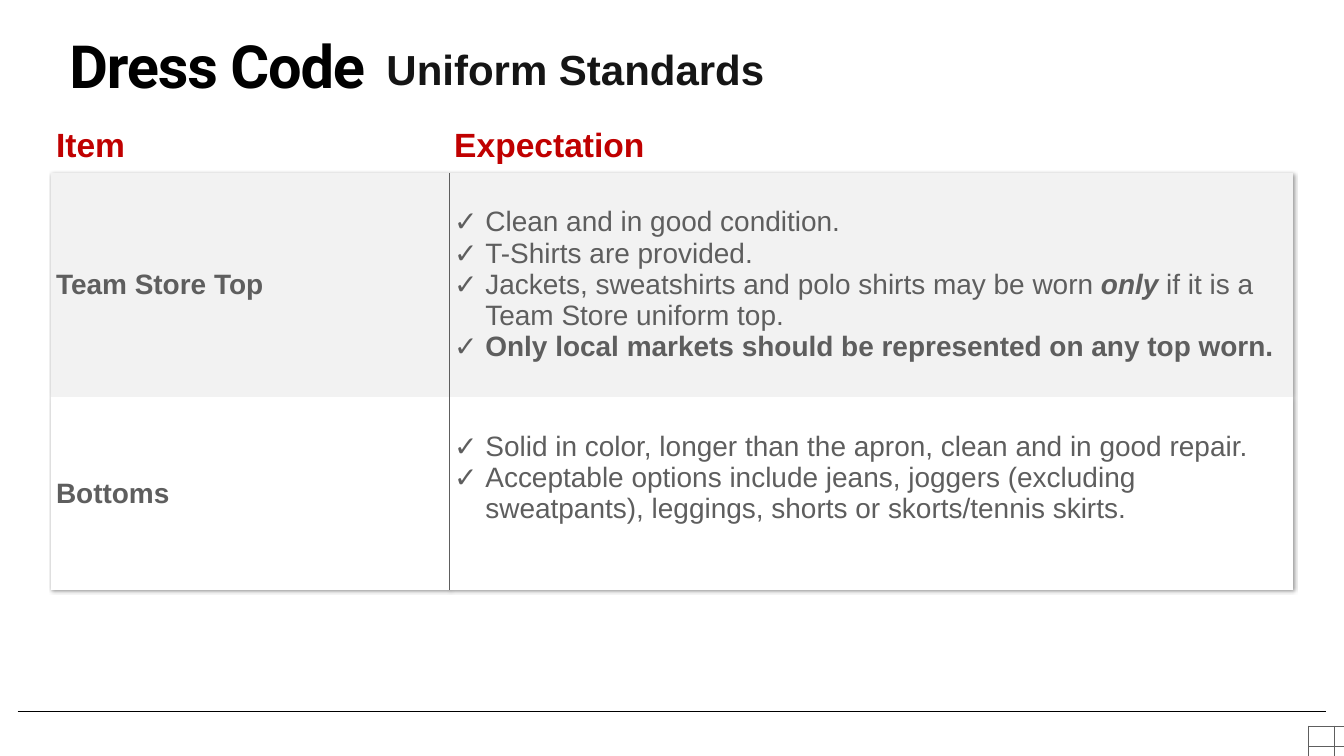
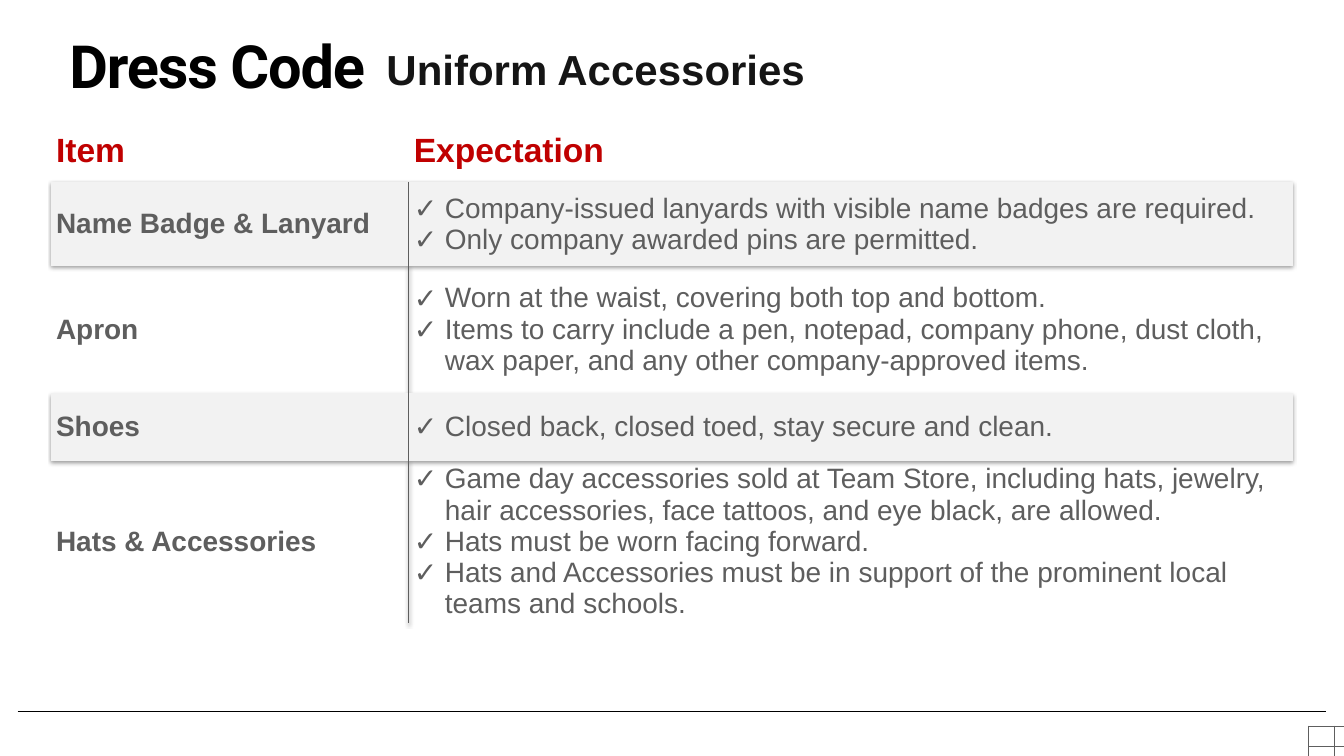
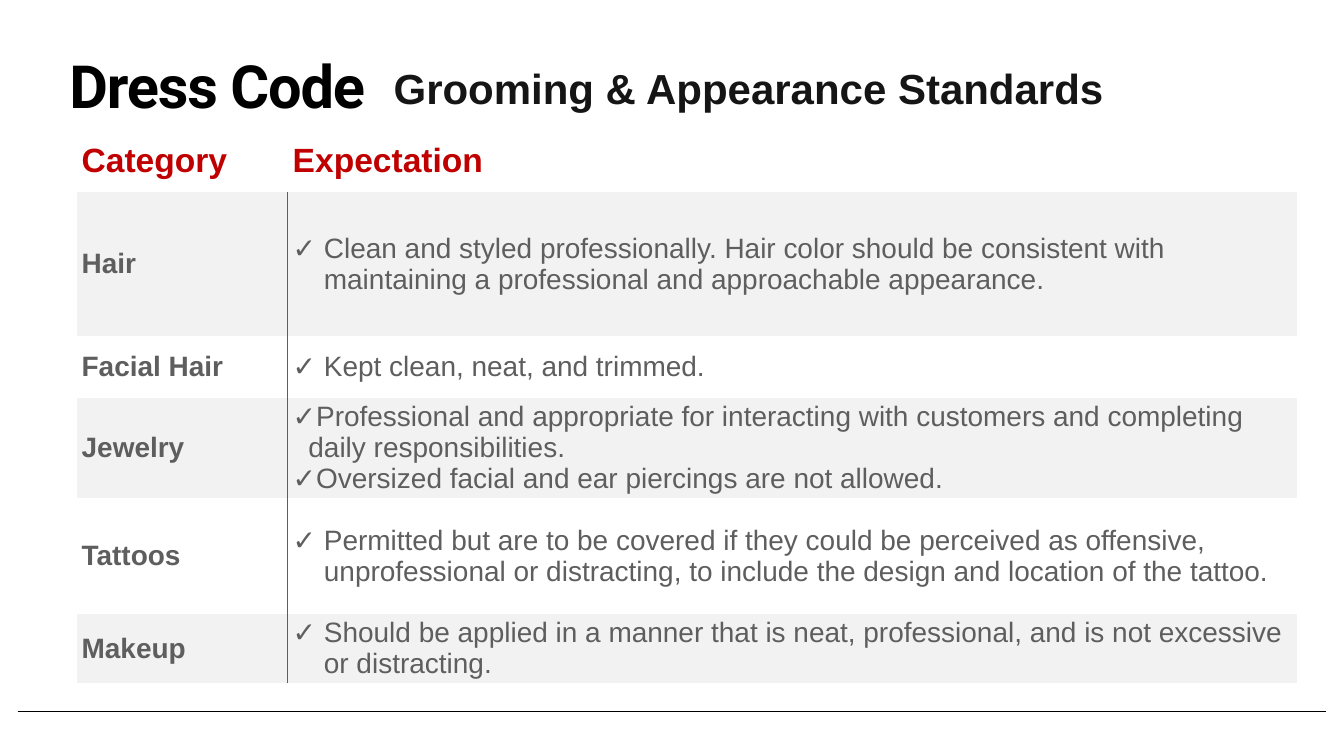
"""Build three dress code slides: uniform, accessories and grooming."""
import pptx
import pptx.dml.color
import pptx.enum.shapes
import pptx.enum.text
import pptx.oxml
import pptx.oxml.ns
import pptx.util
from lxml import etree
from pptx.util import Cm, Pt

COLORS = {
    "black": "000000",
    "subtitle": "151515",
    "heading": "C00000",
    "text": "5E5E5E",
    "band": "F2F2F2",
    "white": "FFFFFF",
}
FONT = "Arial"
TITLE_FONT = "Roboto"
NO_STYLE = "{2D5ABB26-0587-4C30-8999-92F81FD0307C}"
INDENT = 1.57
TIGHT_INDENT = 0.79
SIDES = ("L", "R", "T", "B")


def color(name):
    return pptx.dml.color.RGBColor.from_string(COLORS[name])


def add_child(parent, tag, **attributes):
    return etree.SubElement(parent, pptx.oxml.ns.qn(tag), **attributes)


class Deck:
    """Holds the shared style and the current slide."""

    def __init__(self):
        self.presentation = pptx.Presentation()
        self.presentation.slide_width = Cm(67.74)
        self.presentation.slide_height = Cm(38.1)
        self.slide = None

    def format_run(self, run, size, color_name, bold=True, italic=False, font=FONT):
        run.font.name = font
        run.font.size = Pt(size)
        run.font.bold = bold
        run.font.italic = italic
        run.font.color.rgb = color(color_name)

    def set_frame(self, text_frame, text, inset, spacing, anchor):
        text_frame.text = text
        text_frame.word_wrap = True
        text_frame.auto_size = pptx.enum.text.MSO_AUTO_SIZE.NONE
        text_frame.vertical_anchor = anchor
        for side in ("left", "right", "top", "bottom"):
            setattr(text_frame, f"margin_{side}", Cm(inset))
        paragraph = text_frame.paragraphs[0]
        paragraph.alignment = pptx.enum.text.PP_ALIGN.LEFT
        paragraph.line_spacing = spacing
        return paragraph.runs[0]

    def add_slide(self, title_top=2.03):
        layout = self.presentation.slide_layouts.get_by_name("Title Only")
        self.slide = self.presentation.slides.add_slide(layout)
        self.add_footer_line()
        self.add_title(title_top)

    def add_footer_line(self):
        line = self.slide.shapes.add_connector(
            pptx.enum.shapes.MSO_CONNECTOR.STRAIGHT,
            Cm(0.89), Cm(35.86), Cm(66.83), Cm(35.86))
        line.line.color.rgb = color("black")
        line.line.width = Pt(1)
        add_child(line.element.spPr, "a:effectLst")

    def add_title(self, top):
        title = self.slide.shapes.title
        title.left, title.top, title.width, title.height = (
            Cm(3.35), Cm(top), Cm(27.15), Cm(3.99))
        run = self.set_frame(title.text_frame, "Dress Code", 0.15, 0.8,
                             pptx.enum.text.MSO_ANCHOR.TOP)
        self.format_run(run, 85, "black", font=TITLE_FONT)
        run.font._element.set("spc", "-170")

    def add_subtitle(self, text, left=19.35, top=2.29, width=27.15):
        box = self.slide.shapes.add_textbox(Cm(left), Cm(top), Cm(width), Cm(2.59))
        run = self.set_frame(box.text_frame, text, 0.13, 0.9,
                             pptx.enum.text.MSO_ANCHOR.BOTTOM)
        self.format_run(run, 60, "subtitle")

    def add_table(self, left, top, widths, heights, shadow_direction=None):
        table = self.slide.shapes.add_table(
            len(heights), len(widths), Cm(left), Cm(top),
            Cm(sum(widths)), Cm(sum(heights))).table
        table.first_row = table.horz_banding = False
        for column, width in zip(table.columns, widths):
            column.width = Cm(width)
        for row, height in zip(table.rows, heights):
            row.height = Cm(height)
        properties = table._tbl.tblPr
        properties.find(pptx.oxml.ns.qn("a:tableStyleId")).text = NO_STYLE
        if shadow_direction:
            effects = add_child(properties, "a:effectLst")
            properties.insert(0, effects)
            shadow = add_child(effects, "a:outerShdw", blurRad="50800", dist="38100",
                               dir=str(shadow_direction * 60000), algn="tl", rotWithShape="0")
            shade = add_child(shadow, "a:srgbClr", val=COLORS["black"])
            add_child(shade, "a:alpha", val="40000")
        return table

    def set_fill(self, cell, color_name):
        if color_name:
            cell.fill.solid()
            cell.fill.fore_color.rgb = color(color_name)
        else:
            cell.fill.background()

    def set_borders(self, cell, sides):
        properties = cell._tc.get_or_add_tcPr()
        for position, side in enumerate(sides):
            border = add_child(properties, f"a:ln{side}", w=str(Pt(1)))
            fill = add_child(border, "a:solidFill")
            add_child(fill, "a:srgbClr", val=COLORS["text"])
            properties.insert(position, border)

    def set_label(self, cell, text, size, color_name):
        cell.text = text
        cell.vertical_anchor = pptx.enum.text.MSO_ANCHOR.MIDDLE
        self.format_run(cell.text_frame.paragraphs[0].runs[0], size, color_name)

    def set_checks(self, cell, items, indent):
        cell.vertical_anchor = pptx.enum.text.MSO_ANCHOR.MIDDLE
        text_frame = cell.text_frame
        for number, item in enumerate(items):
            paragraph = text_frame.add_paragraph() if number else text_frame.paragraphs[0]
            properties = paragraph._p.get_or_add_pPr()
            properties.set("marL", str(Cm(indent)))
            properties.set("indent", str(-Cm(indent)))
            add_child(properties, "a:buFont", typeface=FONT)
            add_child(properties, "a:buChar", char="✓")
            parts = [(item, False, False)] if isinstance(item, str) else item
            for text, bold, italic in parts:
                run = paragraph.add_run()
                run.text = text
                self.format_run(run, 40, "text", bold, italic)

    def add_expectations(self, table, heading, rows, plain_fill=None, tight_rows=()):
        for cell, text in zip(table.rows[0].cells, (heading, "Expectation")):
            self.set_fill(cell, None)
            self.set_label(cell, text, 48, "heading")
        for number, (label, items) in enumerate(rows, 1):
            label_cell, items_cell = table.rows[number].cells
            self.set_label(label_cell, label, 40, "text")
            self.set_checks(items_cell, items,
                            TIGHT_INDENT if label in tight_rows else INDENT)
            for cell, side in ((label_cell, "R"), (items_cell, "L")):
                self.set_fill(cell, "band" if number % 2 else plain_fill)
                self.set_borders(cell, side)

    def add_corner_grid(self):
        grid = self.add_table(65.96, 36.58, [1.27] * 2, [1.04] * 6)
        for cell in grid.iter_cells():
            self.set_fill(cell, None)
            self.set_borders(cell, SIDES)


UNIFORM = [
    ("Team Store Top", [
        "Clean and in good condition.",
        "T-Shirts are provided.",
        [("Jackets, sweatshirts and polo shirts may be worn ", False, False),
         ("only", True, True),
         (" if it is a Team Store uniform top.", False, False)],
        [("Only local markets should be represented on any top worn.", True, False)],
    ]),
    ("Bottoms", [
        "Solid in color, longer than the apron, clean and in good repair.",
        "Acceptable options include jeans, joggers (excluding sweatpants), "
        "leggings, shorts or skorts/tennis skirts.",
    ]),
]
ACCESSORIES = [
    ("Name Badge & Lanyard", [
        "Company-issued lanyards with visible name badges are required.",
        "Only company awarded pins are permitted.",
    ]),
    ("Apron", [
        "Worn at the waist, covering both top and bottom.",
        "Items to carry include a pen, notepad, company phone, dust cloth, "
        "wax paper, and any other company-approved items.",
    ]),
    ("Shoes", ["Closed back, closed toed, stay secure and clean."]),
    ("Hats & Accessories", [
        "Game day accessories sold at Team Store, including hats, jewelry, "
        "hair accessories, face tattoos, and eye black, are allowed.",
        "Hats must be worn facing forward.",
        "Hats and Accessories must be in support of the prominent local "
        "teams and schools.",
    ]),
]
GROOMING = [
    ("Hair", [
        "Clean and styled professionally. Hair color should be consistent with "
        "maintaining a professional and approachable appearance.",
    ]),
    ("Facial Hair", ["Kept clean, neat, and trimmed."]),
    ("Jewelry", [
        "Professional and appropriate for interacting with customers and "
        "completing daily responsibilities.",
        "Oversized facial and ear piercings are not allowed.",
    ]),
    ("Tattoos", [
        "Permitted but are to be covered if they could be perceived as offensive, "
        "unprofessional or distracting, to include the design and location of the tattoo.",
    ]),
    ("Makeup", [
        "Should be applied in a manner that is neat, professional, and is not "
        "excessive or distracting.",
    ]),
]


def main():
    deck = Deck()

    deck.add_slide()
    deck.add_subtitle("Uniform Standards")
    deck.add_corner_grid()
    table = deck.add_table(2.57, 6.02, [20.07, 42.55], [2.69, 11.28, 9.75],
                           shadow_direction=45)
    deck.add_expectations(table, "Item", UNIFORM, plain_fill="white")
    table.cell(2, 1).margin_bottom = Cm(1.7)

    deck.add_slide()
    deck.add_subtitle("Uniform Accessories")
    deck.add_corner_grid()
    table = deck.add_table(2.57, 6.02, [18.03, 44.58], [3.15, 4.24, 6.4, 3.4, 8.18],
                           shadow_direction=90)
    deck.add_expectations(table, "Item", ACCESSORIES)

    deck.add_slide(title_top=3)
    deck.add_subtitle("Grooming & Appearance Standards", left=19.71, top=3.25, width=37.67)
    table = deck.add_table(3.86, 6.58, [10.64, 50.85], [3.1, 7.26, 3.1, 5.08, 5.82, 3.48])
    deck.add_expectations(table, "Category", GROOMING, tight_rows=("Jewelry",))

    deck.presentation.save("out.pptx")


if __name__ == "__main__":
    main()
